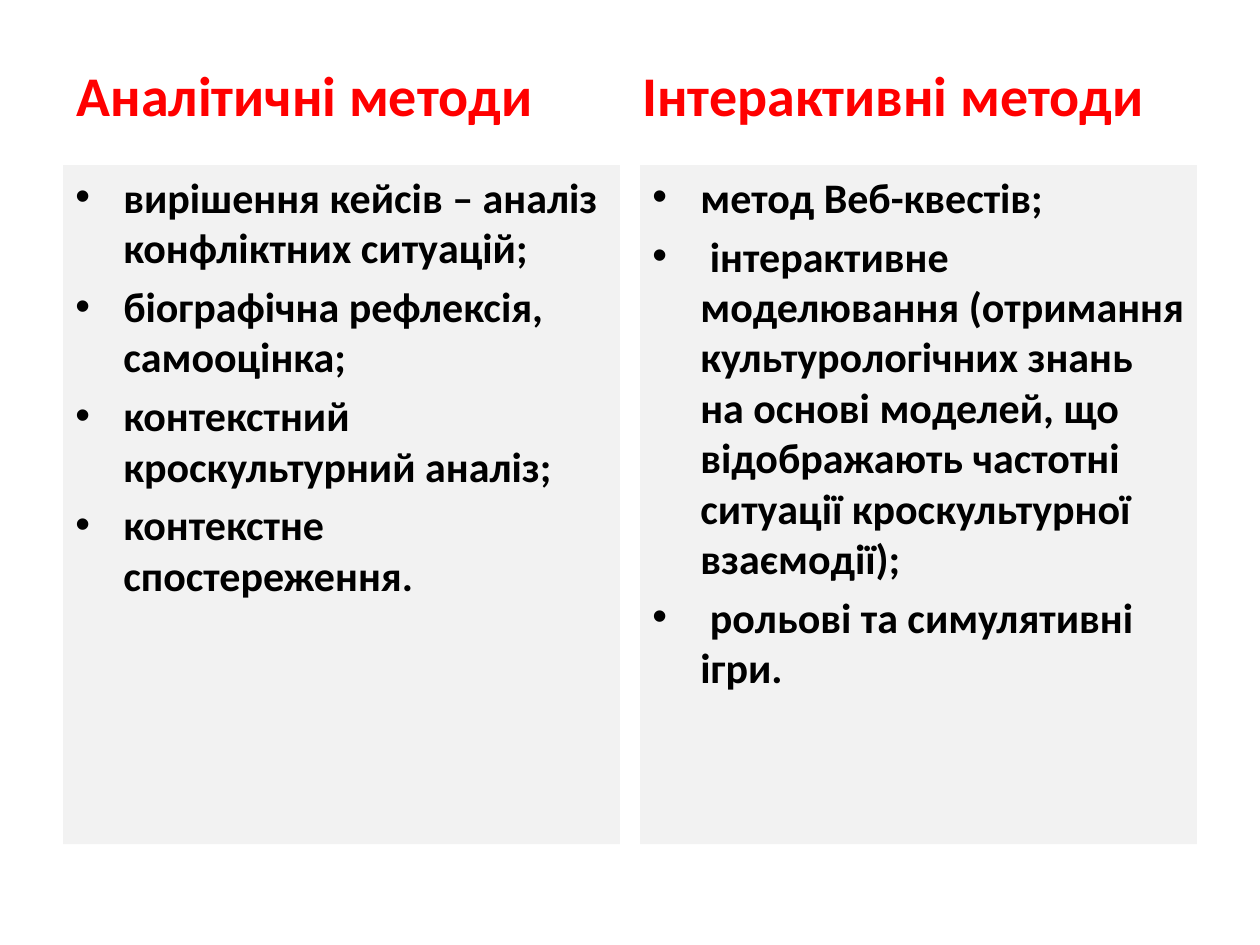
"""Build a two-column slide comparing analytical and interactive methods."""
import lxml.etree
import pptx
import pptx.dml.color
import pptx.enum.shapes
import pptx.enum.text
import pptx.oxml.ns
import pptx.util

COLORS = {"heading": "FF0000", "text": "000000", "panel": "F2F2F2"}
COLUMN_WIDTH = 4.42
HEADING_TOP, HEADING_HEIGHT = 0.36, 0.7
PANEL_TOP, PANEL_HEIGHT = 1.31, 5.39
BULLET_INDENT = pptx.util.Inches(0.38)

COLUMNS = [
    {
        "heading": "Аналітичні методи",
        "heading_left": 0.51,
        "panel_left": 0.5,
        "methods": [
            "вирішення кейсів – аналіз конфліктних ситуацій;",
            "біографічна рефлексія, самооцінка;",
            "контекстний кроскультурний аналіз;",
            "контекстне спостереження.",
        ],
    },
    {
        "heading": "Інтерактивні методи",
        "heading_left": 5,
        "panel_left": 10 - 0.5 - COLUMN_WIDTH,
        "methods": [
            "метод Веб-квестів;",
            " інтерактивне моделювання (отримання культурологічних знань на основі "
            "моделей, що відображають частотні ситуації кроскультурної взаємодії);",
            " рольові та симулятивні ігри.",
        ],
    },
]


def write_text(shape, lines, *, size, color, anchor, bulleted=False):
    frame = shape.text_frame
    frame.word_wrap = True
    frame.vertical_anchor = anchor
    for index, line in enumerate(lines):
        paragraph = frame.paragraphs[0] if index == 0 else frame.add_paragraph()
        paragraph.alignment = pptx.enum.text.PP_ALIGN.LEFT
        paragraph.space_before = pptx.util.Pt(size * 0.2)
        run = paragraph.add_run()
        run.text = line
        run.font.name = "Calibri"
        run.font.size = pptx.util.Pt(size)
        run.font.bold = True
        run.font.color.rgb = pptx.dml.color.RGBColor.from_string(color)
        if bulleted:
            properties = paragraph._p.get_or_add_pPr()
            properties.set("marL", str(BULLET_INDENT))
            properties.set("indent", str(-BULLET_INDENT))
            font = lxml.etree.SubElement(properties, pptx.oxml.ns.qn("a:buFont"))
            font.set("typeface", "Arial")
            bullet = lxml.etree.SubElement(properties, pptx.oxml.ns.qn("a:buChar"))
            bullet.set("char", "•")


presentation = pptx.Presentation()
presentation.slide_width = pptx.util.Inches(10)
presentation.slide_height = pptx.util.Inches(7.5)
slide = presentation.slides.add_slide(presentation.slide_layouts[6])

for column in COLUMNS:
    heading = slide.shapes.add_textbox(
        pptx.util.Inches(column["heading_left"]),
        pptx.util.Inches(HEADING_TOP),
        pptx.util.Inches(COLUMN_WIDTH),
        pptx.util.Inches(HEADING_HEIGHT),
    )
    write_text(
        heading,
        [column["heading"]],
        size=32,
        color=COLORS["heading"],
        anchor=pptx.enum.text.MSO_ANCHOR.BOTTOM,
    )

    panel = slide.shapes.add_shape(
        pptx.enum.shapes.MSO_SHAPE.RECTANGLE,
        pptx.util.Inches(column["panel_left"]),
        pptx.util.Inches(PANEL_TOP),
        pptx.util.Inches(COLUMN_WIDTH),
        pptx.util.Inches(PANEL_HEIGHT),
    )
    panel.shadow.inherit = False
    panel.fill.solid()
    panel.fill.fore_color.rgb = pptx.dml.color.RGBColor.from_string(COLORS["panel"])
    panel.line.fill.background()
    write_text(
        panel,
        column["methods"],
        size=24,
        color=COLORS["text"],
        anchor=pptx.enum.text.MSO_ANCHOR.TOP,
        bulleted=True,
    )

presentation.save("out.pptx")
